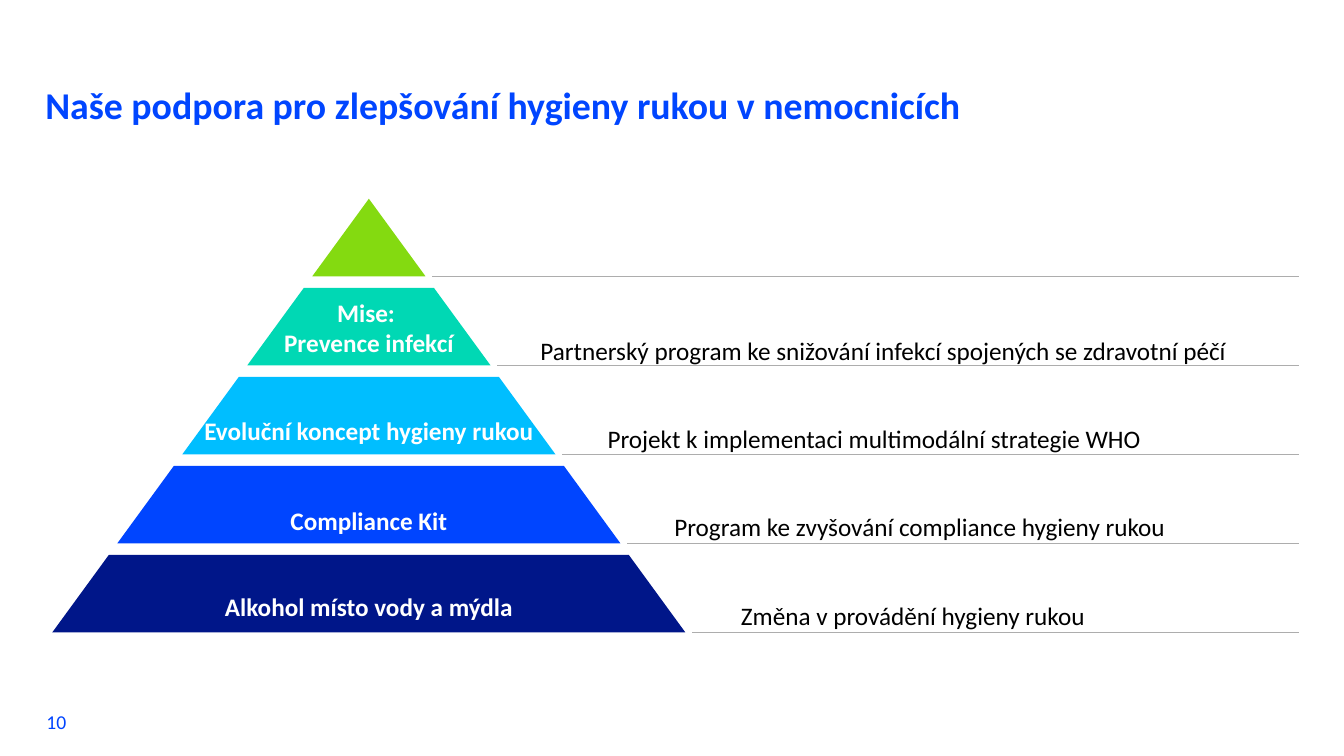
from lxml.etree import SubElement
from pptx import Presentation
from pptx.dml.color import RGBColor
from pptx.enum.shapes import MSO_CONNECTOR
from pptx.enum.text import MSO_ANCHOR, MSO_AUTO_SIZE, PP_ALIGN
from pptx.oxml.ns import qn
from pptx.util import Pt

COLORS = {
    "blue": "0045FF", "navy": "001689", "sky": "00BEFF", "teal": "00D8B4",
    "lime": "84DA10", "rule": "ADADAD", "white": "FFFFFF", "black": "000000",
}
APEX_X, APEX_Y = 263.5, 142
TIER_H, TIER_PITCH, SLOPE = 55.4, 63.6, 0.73
RULE_GAP, RULE_END = 5, 928
TEXT_H = 22

TIERS = ["lime", "teal", "sky", "blue", "navy"]
LABELS = [
    (212.4, 122, ["Mise: ", "Prevence infekcí"]),
    (296.6, 237, ["Evoluční koncept hygieny rukou"]),
    (360.7, 113, ["Compliance Kit"]),
    (422.6, 207, ["Alkohol místo vody a mýdla"]),
]
NOTES = [
    (386, 239.8, 491, "Partnerský program ke snižování infekcí spojených se zdravotní péčí"),
    (434, 302.4, 385, "Projekt k implementaci multimodální strategie WHO"),
    (481.7, 365, 354, "Program ke zvyšování compliance hygieny rukou"),
    (529.2, 429.1, 248, "Změna v provádění hygieny rukou"),
]


def rgb(name):
    """Return the named colour."""
    return RGBColor.from_string(COLORS[name])


def add_text(s, box, lines, size, color, bold=False, align=PP_ALIGN.LEFT,
             anchor=MSO_ANCHOR.TOP, wrap=False):
    """Add a text box without insets, one paragraph per line."""
    sp = s.shapes.add_textbox(*map(Pt, box))
    tf = sp.text_frame
    tf.word_wrap = wrap
    tf.auto_size = MSO_AUTO_SIZE.NONE if wrap else MSO_AUTO_SIZE.SHAPE_TO_FIT_TEXT
    tf.vertical_anchor = anchor
    tf.margin_left = tf.margin_right = tf.margin_top = tf.margin_bottom = 0
    for i, line in enumerate(lines):
        p = tf.add_paragraph() if i else tf.paragraphs[0]
        p.alignment = align
        r = p.add_run()
        r.text = line
        r.font.name = "Calibri"
        r.font.size = Pt(size)
        r.font.bold = bold
        r.font.color.rgb = rgb(color)


def add_tier(s, top, color):
    """Add one slice of the pyramid and return its right bottom corner."""
    bottom = top + TIER_H
    upper, lower = SLOPE * (top - APEX_Y), SLOPE * (bottom - APEX_Y)
    corners = [(APEX_X - upper, top), (APEX_X + upper, top),
               (APEX_X + lower, bottom), (APEX_X - lower, bottom)]
    points = [(Pt(x), Pt(y)) for x, y in dict.fromkeys(corners)]
    builder = s.shapes.build_freeform(*points[0], scale=1.0)
    builder.add_line_segments(points[1:], close=True)
    sp = builder.convert_to_shape()
    sp.shadow.inherit = False
    sp.fill.solid()
    sp.fill.fore_color.rgb = rgb(color)
    sp.line.fill.background()
    return corners[2]


def add_rule(s, x, y):
    """Add a thin horizontal line from x to the right margin."""
    line = s.shapes.add_connector(
        MSO_CONNECTOR.STRAIGHT, Pt(x), Pt(y), Pt(RULE_END), Pt(y))
    line.line.color.rgb = rgb("rule")
    line.line.width = Pt(0.5)
    SubElement(line._element.spPr, qn("a:effectLst"))


def main():
    """Build the pyramid slide and save it."""
    prs = Presentation()
    prs.slide_width, prs.slide_height = Pt(960), Pt(540)
    s = prs.slides.add_slide(prs.slide_layouts[6])
    add_text(s, (32.4, 31.7, 895, 59),
             ["Naše podpora pro zlepšování hygieny rukou v nemocnicích"],
             27, "blue", bold=True, anchor=MSO_ANCHOR.BOTTOM, wrap=True)
    add_text(s, (33.1, 508.3, 38, 13.7), ["10"], 14, "blue",
             anchor=MSO_ANCHOR.MIDDLE, wrap=True)
    for i, color in enumerate(TIERS):
        right, bottom = add_tier(s, APEX_Y + i * TIER_PITCH, color)
        add_rule(s, right + RULE_GAP, bottom)
    for top, width, lines in LABELS:
        add_text(s, (APEX_X - width / 2, top, width, TEXT_H * len(lines)),
                 lines, 18, "white", bold=True, align=PP_ALIGN.CENTER)
    for left, top, width, note in NOTES:
        add_text(s, (left, top, width, TEXT_H), [note], 18, "black")
    prs.save("out.pptx")


if __name__ == "__main__":
    main()
